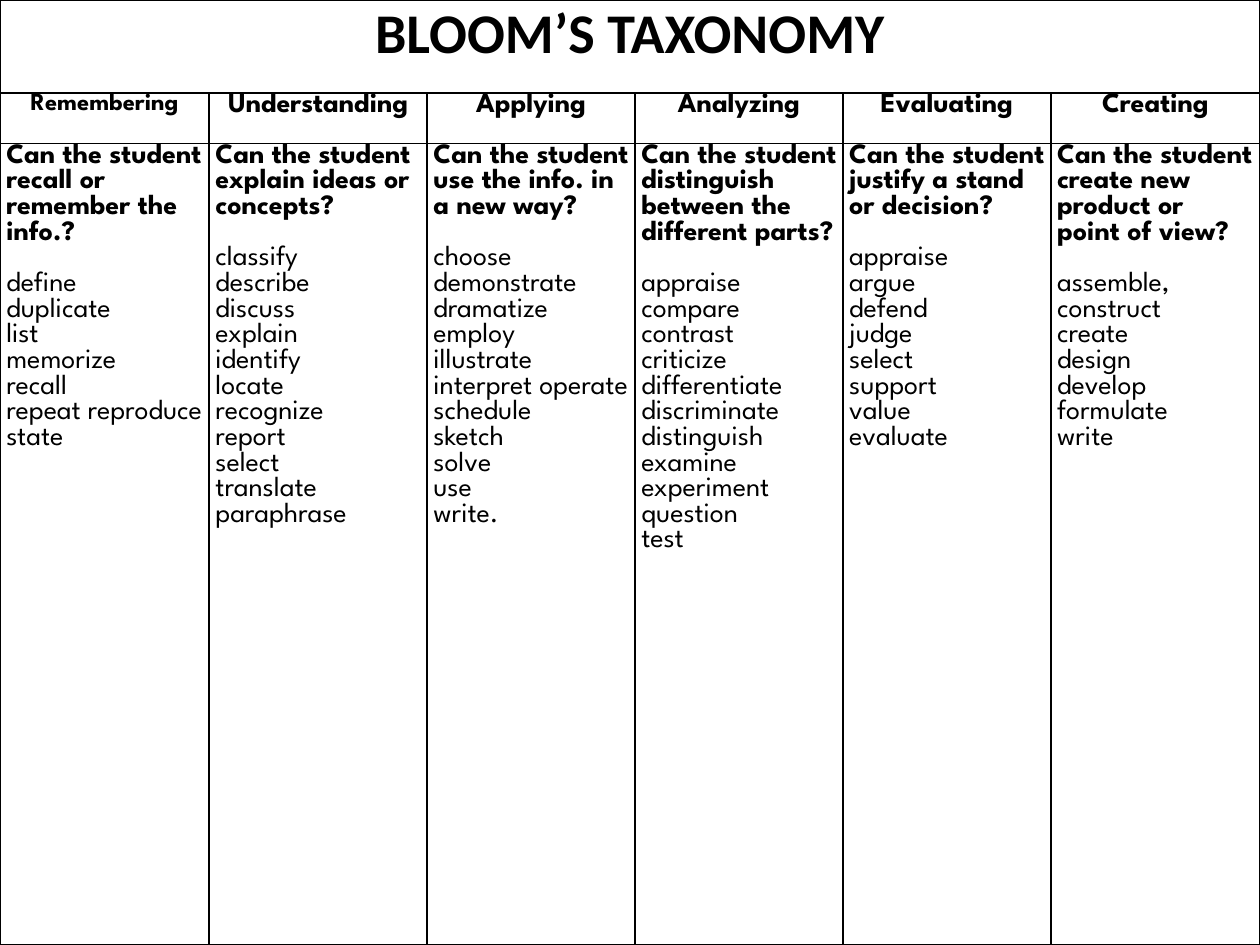
"""Build a one-slide table of Bloom's taxonomy with a question and verbs per level."""
from lxml.etree import SubElement
from pptx import Presentation
from pptx.dml.color import RGBColor
from pptx.enum.text import PP_ALIGN as Align
from pptx.oxml.ns import qn
from pptx.util import Inches, Pt

BLACK = RGBColor(0, 0, 0)
COLUMNS = [1.66, 1.73, 1.65, 1.65, 1.65, 1.66]
ROWS = [0.74, 0.4, 6.36]
LEVELS = [
    ("Remembering", "Can the student recall or remember the info.?",
     ["define", "duplicate", "list", "memorize", "recall", "repeat reproduce", "state"]),
    ("Understanding", "Can the student explain ideas or concepts?",
     ["classify", "describe", "discuss", "explain", "identify", "locate", "recognize",
      "report", "select", "translate", "paraphrase"]),
    ("Applying", "Can the student use the info. in a new way?",
     ["choose demonstrate dramatize employ", "illustrate interpret operate",
      "schedule", "sketch", "solve", "use", "write."]),
    ("Analyzing", "Can the student distinguish between the different parts?",
     ["appraise compare contrast",
      "criticize differentiate discriminate distinguish examine experiment question", "test"]),
    ("Evaluating", "Can the student justify a stand or decision?",
     ["appraise", "argue", "defend", "judge", "select", "support", "value", "evaluate"]),
    ("Creating", "Can the student create new product or point of view?",
     ["assemble, construct", "create", "design", "develop", "formulate", "write"]),
]


def write(paragraph, text, size=16, face="League Spartan", bold=True, align=Align.LEFT, before=0):
    paragraph.alignment = align
    paragraph.space_before = Pt(before)
    run = paragraph.add_run()
    run.text = text
    run.font.size = Pt(size)
    run.font.name = face
    run.font.bold = bold
    run.font.color.rgb = BLACK


deck = Presentation()
deck.slide_width, deck.slide_height = Inches(10), Inches(7.5)
slide = deck.slides.add_slide(deck.slide_layouts[6])
taxonomy = slide.shapes.add_table(
    len(ROWS), len(COLUMNS), 0, 0, deck.slide_width, deck.slide_height).table
taxonomy.first_row = taxonomy.horz_banding = False
for column, width in zip(taxonomy.columns, COLUMNS):
    column.width = Inches(width)
for row, height in zip(taxonomy.rows, ROWS):
    row.height = Inches(height)

for cell in taxonomy.iter_cells():
    cell.margin_left = cell.margin_right = Inches(0.05)
    cell.margin_top = cell.margin_bottom = 0
    properties = cell._tc.get_or_add_tcPr()
    for side in ("a:lnL", "a:lnR", "a:lnT", "a:lnB"):
        border = SubElement(properties, qn(side), w=str(Pt(1)))
        ink = SubElement(border, qn("a:solidFill"))
        SubElement(ink, qn("a:srgbClr"), val=str(BLACK))
    cell.fill.background()

title = taxonomy.cell(0, 0)
title.merge(taxonomy.cell(0, len(COLUMNS) - 1))
write(title.text_frame.paragraphs[0], "BLOOM’S TAXONOMY",
      size=32, face="Calibri", align=Align.CENTER)

for index, (level, question, verbs) in enumerate(LEVELS):
    heading = taxonomy.cell(1, index).text_frame
    write(heading.paragraphs[0], level, size=16 if index else 14, align=Align.CENTER)
    body = taxonomy.cell(2, index).text_frame
    write(body.paragraphs[0], question)
    for order, verb in enumerate(verbs):
        write(body.add_paragraph(), verb, bold=False, before=0 if order else 14.7)

deck.save("out.pptx")
